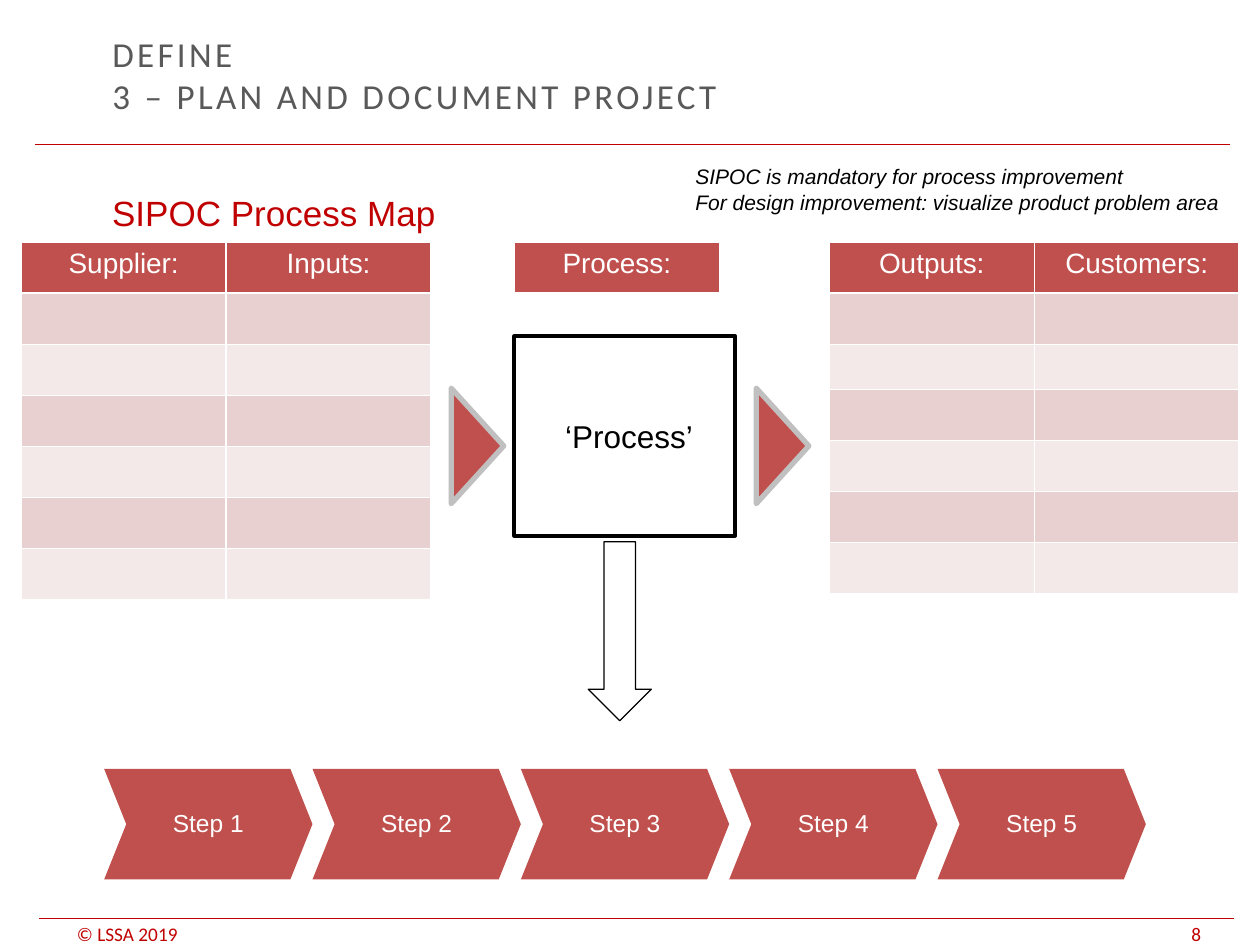
from lxml.etree import SubElement
from pptx import Presentation
from pptx.dml.color import RGBColor
from pptx.enum.shapes import MSO_CONNECTOR, MSO_SHAPE
from pptx.enum.text import MSO_ANCHOR, PP_ALIGN
from pptx.oxml.ns import qn
from pptx.util import Cm, Pt

COLORS = {
    "accent": "C00000", "brick": "C0504D", "band_dark": "E8D0D0", "band_light": "F4E9E9",
    "title": "595959", "silver": "C0C0C0", "black": "000000", "white": "FFFFFF",
}
ROW = 1.03
COLUMN = 4.13


def rgb(name):
    """Return the palette colour with the given name."""
    return RGBColor.from_string(COLORS[name])


def lengths(box):
    """Turn a box in centimetres into slide lengths."""
    return [Cm(value) for value in box]


def format_text(frame, size, color, font="Arial", italic=False, align=None, spacing=None):
    """Format every run of a text frame alike."""
    for paragraph in frame.paragraphs:
        paragraph.alignment = align
        paragraph.line_spacing = spacing
        for run in paragraph.runs:
            run.font.size = Pt(size)
            run.font.name = font
            run.font.bold = False
            run.font.italic = italic
            run.font.color.rgb = rgb(color)


def add_label(slide, box, text, size, color, wrap=True, **style):
    """Add a text box and return its frame."""
    frame = slide.shapes.add_textbox(*lengths(box)).text_frame
    frame.word_wrap = wrap
    frame.text = text
    format_text(frame, size, color, **style)
    return frame


def add_block(slide, preset, box, fill=None, line=None, width=0):
    """Add a preset shape without shadow, with optional fill and outline."""
    block = slide.shapes.add_shape(preset, *lengths(box))
    block.shadow.inherit = False
    if fill:
        block.fill.solid()
        block.fill.fore_color.rgb = rgb(fill)
    else:
        block.fill.background()
    if line:
        block.line.color.rgb = rgb(line)
        block.line.width = Pt(width)
    else:
        block.line.fill.background()
    return block


def add_rule(slide, left, top, width):
    """Draw a thin horizontal rule."""
    rule = slide.shapes.add_connector(
        MSO_CONNECTOR.STRAIGHT, *lengths((left, top, left + width, top)))
    rule.line.color.rgb = rgb("accent")
    rule.line.width = Pt(0.75)
    SubElement(rule._element.spPr, qn("a:effectLst"))


def add_header(slide, box):
    """Place the title, the rule, the subtitle and the note."""
    left, top, width, height = box
    title = slide.shapes.title
    title.left, title.top, title.width, title.height = lengths(
        (left + 1.3, top + 0.66, 18, 1.68))
    frame = title.text_frame
    frame.text = "DEFINE\v3 – PLAN AND DOCUMENT PROJECT"
    frame.vertical_anchor = MSO_ANCHOR.MIDDLE
    format_text(frame, 20, "title", font="Calibri", align=PP_ALIGN.LEFT)
    for run in frame.paragraphs[0].runs:
        run.font._element.set("spc", "190")
    add_rule(slide, left, top + 2.92, width)
    add_label(slide, (left + 1.3, top + 3.73, 22, height - 3.73),
              "SIPOC Process Map", 20, "accent")
    add_label(slide, (left + 13.06, top + 3.18, 11.5, 1.27),
              "SIPOC is mandatory for process improvement\n"
              "For design improvement: visualize product problem area",
              12, "black", wrap=False, italic=True)


def add_columns(slide, left, top, headings, row_heights):
    """Add a banded table with headings above empty rows."""
    width = COLUMN * len(headings)
    table = slide.shapes.add_table(
        len(row_heights), len(headings),
        *lengths((left, top, width, sum(row_heights)))).table
    for column in table.columns:
        column.width = Cm(COLUMN)
    for index, height in enumerate(row_heights):
        table.rows[index].height = Cm(height)
        band = "band_dark" if index % 2 else "band_light"
        for cell in table.rows[index].cells:
            cell.fill.solid()
            cell.fill.fore_color.rgb = rgb(band if index else "brick")
            if index:
                cell.margin_top = cell.margin_bottom = 0
    for cell, heading in zip(table.rows[0].cells, headings):
        cell.text = heading
        format_text(cell.text_frame, 16, "white", align=PP_ALIGN.CENTER)


def add_process(slide, box):
    """Place the process heading, its frame and the flow arrows."""
    left, top, width, height = box
    add_columns(slide, left, top, ["Process:"], [ROW])
    process = add_block(slide, MSO_SHAPE.RECTANGLE, (left, top + 1.9, width, 4.02),
                        line="black", width=2.25)
    process.text_frame.text = " ‘Process’"
    process.text_frame.vertical_anchor = MSO_ANCHOR.MIDDLE
    format_text(process.text_frame, 18, "black", align=PP_ALIGN.CENTER)
    for offset in (-1.91, 4.24):
        pointer = add_block(slide, MSO_SHAPE.ISOSCELES_TRIANGLE,
                            (left + offset, top + 3.58, 2.33, 1.06),
                            fill="brick", line="silver", width=3)
        pointer.rotation = 90
    add_block(slide, MSO_SHAPE.DOWN_ARROW, (left + 1.49, top + 6.04, 1.27, height - 6.04),
              fill="white", line="black", width=0.75)


def add_steps(slide, box, count):
    """Fill the box with equal numbered chevrons."""
    left, top, width, height = box
    step_width = width / count
    for index in range(count):
        step = add_block(slide, MSO_SHAPE.CHEVRON,
                         (left + index * step_width, top, step_width, height), fill="brick")
        step.adjustments[0] = 0.2
        frame = step.text_frame
        frame.margin_left = frame.margin_right = 0
        frame.text = f"Step {index + 1}"
        frame.vertical_anchor = MSO_ANCHOR.MIDDLE
        format_text(frame, 14, "white", align=PP_ALIGN.CENTER, spacing=0.9)


def add_footer(slide, box):
    """Place the bottom rule, the copyright line and the page number."""
    left, top, width, height = box
    add_rule(slide, left, top, width)
    for offset, label_width, text in ((0.51, 3.6, "© LSSA 2019"), (22.98, 1.63, "8")):
        frame = add_label(slide, (left + offset, top + 0.06, label_width, height - 0.06),
                          text, 11, "accent", wrap=False, font="Calibri")
        frame.margin_top = frame.margin_bottom = 0
        frame.vertical_anchor = MSO_ANCHOR.BOTTOM


def main():
    """Build and save the slide."""
    presentation = Presentation()
    presentation.slide_width, presentation.slide_height = Cm(25.4), Cm(19.05)
    slide = presentation.slides.add_slide(presentation.slide_layouts[5])
    add_header(slide, (0.71, 0, 24.08, 17.73))
    add_columns(slide, 16.72, 4.88, ["Outputs:", "Customers:"],
                [ROW, ROW, 0.91] + [ROW] * 4)
    add_columns(slide, 0.43, 4.88, ["Supplier:", "Inputs:"], [ROW] * 7)
    add_process(slide, (10.37, 4.88, 4.45, 9.65))
    add_steps(slide, (2.1, 15.5, 21, 2.23), 5)
    add_footer(slide, (0.79, 18.52, 24.08, 0.53))
    presentation.save("out.pptx")


if __name__ == "__main__":
    main()
